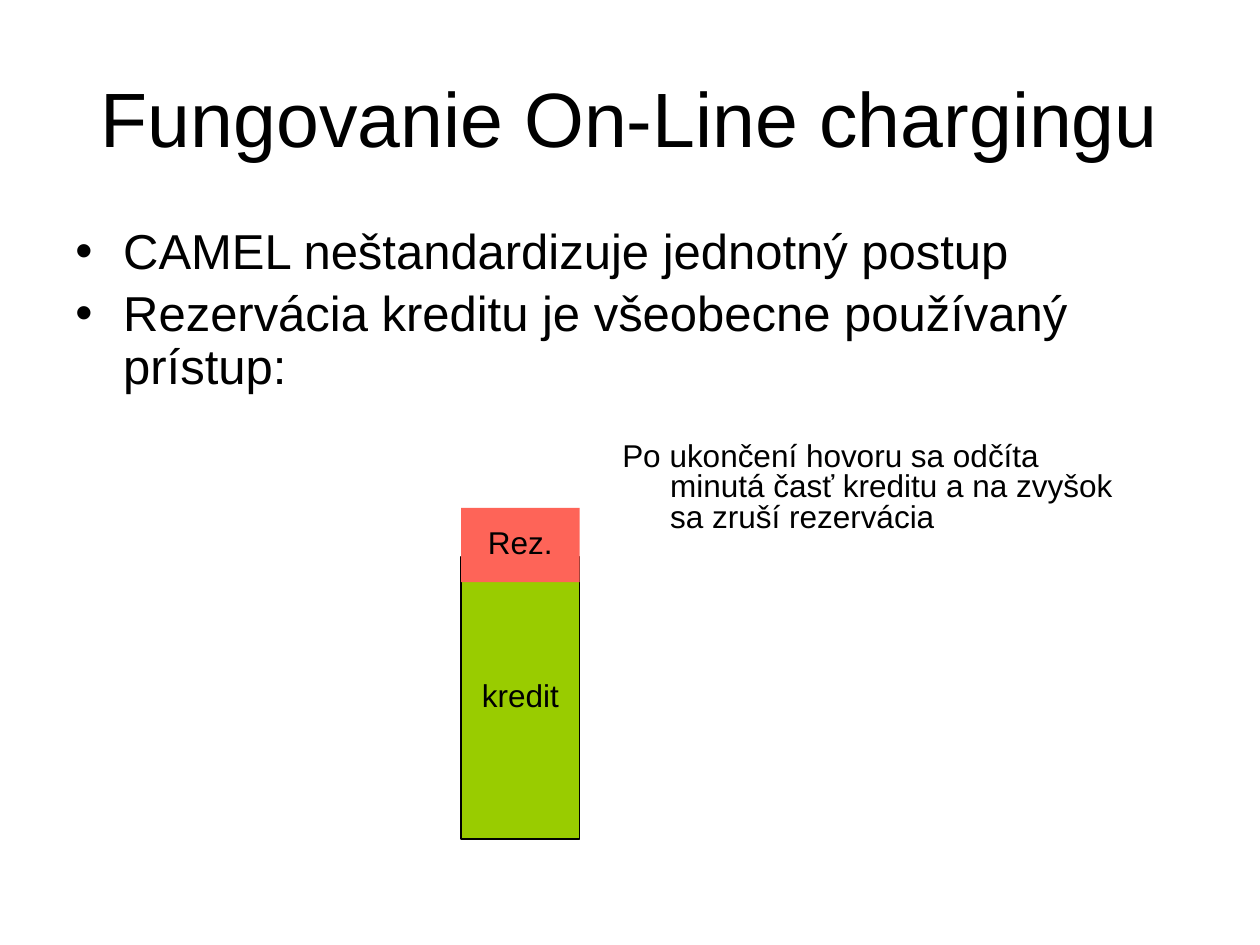
from dataclasses import dataclass

from lxml.etree import SubElement
from pptx import Presentation
from pptx.dml.color import RGBColor as Rgb
from pptx.enum.shapes import MSO_SHAPE as Shape
from pptx.enum.text import MSO_ANCHOR as Anchor, PP_ALIGN as Align
from pptx.oxml.ns import qn
from pptx.util import Inches, Pt


@dataclass(frozen=True)
class Theme:
    font: str = "Arial"
    ink: str = "000000"
    paper: str = "FFFFFF"
    credit: str = "99CC00"
    hold: str = "FE6458"
    title: int = 44
    body: int = 28
    note: int = 18
    indent: float = 0.38


class Deck:
    def __init__(self, prs, theme):
        self.theme = theme
        self.slide = prs.slides.add_slide(prs.slide_layouts[5])
        back = self.slide.background.fill
        back.solid()
        back.fore_color.rgb = Rgb.from_string(theme.paper)

    def add_run(self, para, text, size, align=Align.LEFT, lines=1.0, gap=0):
        """Add one run; gap is the space before as a share of the size."""
        para.alignment = align
        para.line_spacing = lines
        para.space_before = Pt(size * gap)
        run = para.add_run()
        run.text = text
        run.font.size = Pt(size)
        run.font.name = self.theme.font
        run.font.color.rgb = Rgb.from_string(self.theme.ink)

    def hang(self, para, bullet=None):
        """Hang the first line to the left, with a bullet if one is given."""
        props = para._p.get_or_add_pPr()
        step = Inches(self.theme.indent)
        props.set("marL", str(step))
        props.set("indent", str(-step))
        if bullet:
            SubElement(props, qn("a:buFont")).set("typeface", self.theme.font)
            SubElement(props, qn("a:buChar")).set("char", bullet)

    def title(self, text, box):
        shape = self.slide.shapes.title
        shape.left, shape.top, shape.width, shape.height = map(Inches, box)
        frame = shape.text_frame
        frame.word_wrap = True
        frame.vertical_anchor = Anchor.MIDDLE
        self.add_run(frame.paragraphs[0], text, self.theme.title, Align.CENTER)

    def text(self, items, box, size, lines, bullet=None):
        frame = self.slide.shapes.add_textbox(*map(Inches, box)).text_frame
        frame.word_wrap = True
        for i, item in enumerate(items):
            para = frame.add_paragraph() if i else frame.paragraphs[0]
            self.add_run(para, item, size, lines=lines, gap=0.2)
            self.hang(para, bullet)

    def bar(self, label, box, fill, edge=None):
        shape = self.slide.shapes.add_shape(Shape.RECTANGLE, *map(Inches, box))
        shape.shadow.inherit = False
        shape.fill.solid()
        shape.fill.fore_color.rgb = Rgb.from_string(fill)
        if edge:
            shape.line.color.rgb = Rgb.from_string(edge)
            shape.line.width = Pt(0.75)
        else:
            shape.line.fill.background()
        frame = shape.text_frame
        frame.word_wrap = False
        frame.vertical_anchor = Anchor.MIDDLE
        self.add_run(frame.paragraphs[0], label, self.theme.note,
                     Align.CENTER, lines=0.8, gap=0.2)


def main():
    prs = Presentation()
    prs.slide_width, prs.slide_height = Inches(10), Inches(7.5)
    theme = Theme()
    deck = Deck(prs, theme)

    deck.title("Fungovanie On-Line chargingu", (0.5, 0.3, 9, 1.25))
    deck.text(["CAMEL neštandardizuje jednotný postup",
               "Rezervácia kreditu je všeobecne používaný prístup:"],
              (0.5, 1.75, 9, 1.57), theme.body, 0.9, "•")
    deck.text(["Po ukončení hovoru sa odčíta minutá časť kreditu "
               "a na zvyšok sa zruší rezervácia"],
              (4.84, 3.47, 4.09, 0.79), theme.note, 0.8)

    left, width = 3.66, 0.94
    deck.bar("kredit", (left, 4.42, width, 2.24), theme.credit, theme.ink)
    deck.bar("Rez.", (left, 4.03, width, 0.59), theme.hold)
    prs.save("out.pptx")


if __name__ == "__main__":
    main()
